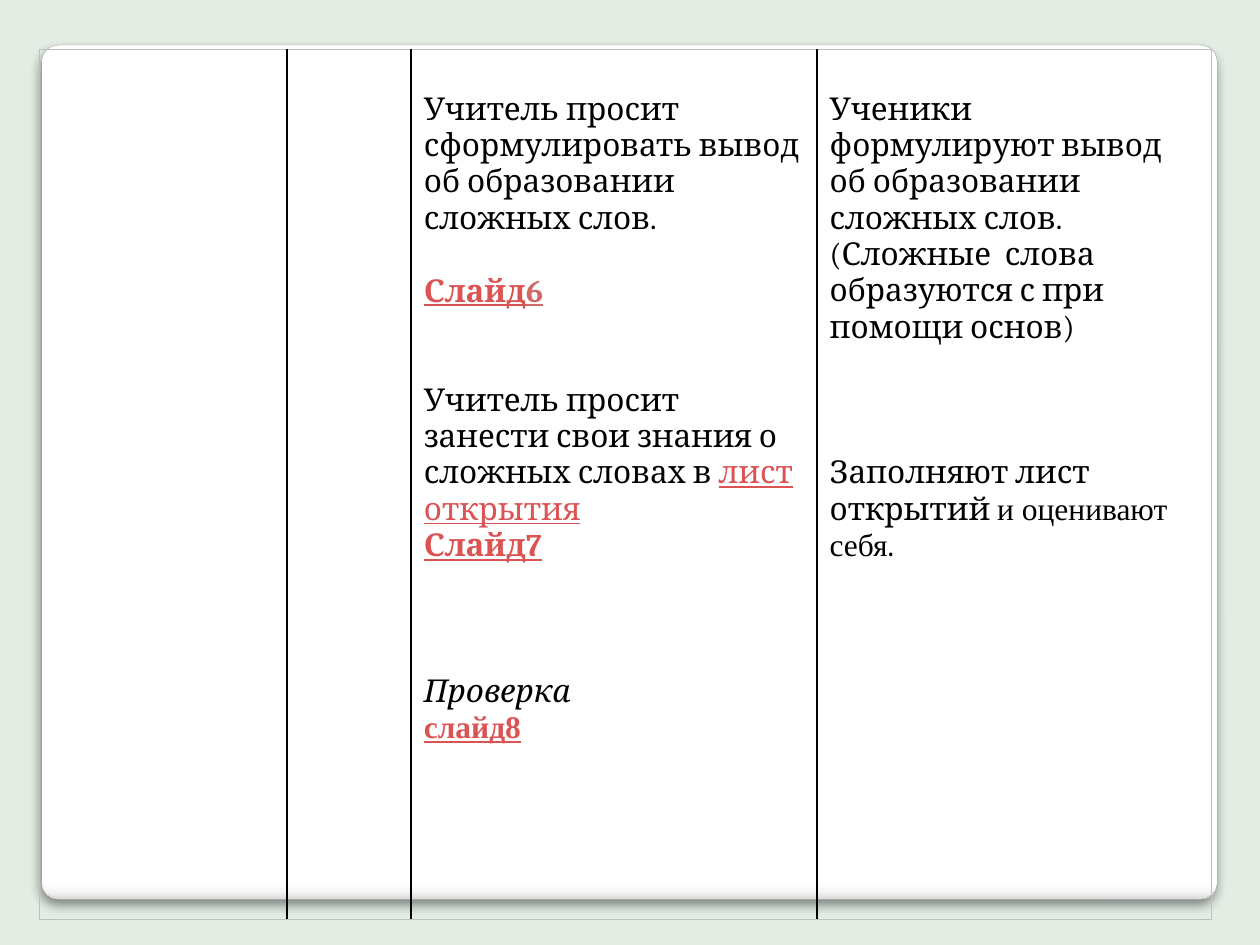
from lxml import etree
from pptx import Presentation
from pptx.dml.color import RGBColor as Rgb
from pptx.enum.shapes import MSO_SHAPE as Kind
from pptx.oxml import parse_xml as parse
from pptx.oxml.ns import qn
from pptx.util import Cm, Pt

NS = 'xmlns:a="http://schemas.openxmlformats.org/drawingml/2006/main"'
INK, LINK, ROSE, EDGE = "000000", "DB5353", "CF6868", "BFBFBF"
SERIF, ROMAN = "Cambria", "Times New Roman"
COLS = [5, 2.5, 8.18, 7.95]
ROWS = [16.51, 1.02]
STOPS = [(0, "FFFFFF"), (98, "FFFFFF"), (99, "F7F7F7"), (100, "DADADA")]
STEP = 20.8

# fmt: off
TEXT = {
    2: [
        (0, SERIF, "", [("Учитель просит сформулировать вывод об образовании сложных слов.", INK)]),
        (1, SERIF, "bu", [("Слайд", LINK), ("6", ROSE)]),
        (2, SERIF, "", [("Учитель просит занести свои знания о сложных словах в ", INK),
                        ("лист открытия", LINK)]),
        (0, SERIF, "bu", [("Слайд7", LINK)]),
        (3, SERIF, "i", [("Проверка", INK)]),
        (0, ROMAN, "bu", [("слайд8", LINK)]),
    ],
    3: [
        (0, SERIF, "", [("Ученики формулируют вывод об образовании сложных слов. "
                         "(Сложные  слова образуются с при помощи основ)", INK)]),
        (3, SERIF, "", [("Заполняют лист открытий ", INK),
                        ("и оценивают себя", INK, ROMAN), (".", INK)]),
    ],
}
# fmt: on


def rgb(code):
    """Turn a hex string into a colour."""
    return Rgb.from_string(code)


def add_card(slide):
    """Draw the rounded white card with its soft shadow."""
    card = slide.shapes.add_shape(Kind.ROUNDED_RECTANGLE, Cm(0.84), Cm(0.91), Cm(23.7), Cm(17.22))
    card.adjustments[0] = 0.02
    card.line.color.rgb = rgb("A4A4A4")
    card.line.width = Pt(0.16)
    stops = "".join(
        f'<a:gs pos="{pos * 1000}"><a:srgbClr val="{code}"/></a:gs>' for pos, code in STOPS
    )
    props = card.element.spPr
    props.find(qn("a:ln")).addprevious(
        parse(f'<a:gradFill {NS}><a:gsLst>{stops}</a:gsLst><a:lin ang="5400000"/></a:gradFill>')
    )
    props.append(
        parse(
            f'<a:effectLst {NS}><a:outerShdw blurRad="{Pt(6)}" dist="{Pt(4)}" dir="5400000">'
            '<a:srgbClr val="000000"><a:alpha val="45000"/></a:srgbClr></a:outerShdw></a:effectLst>'
        )
    )


def set_edge(cell, side, style):
    """Set one border of a cell, or clear it when style is None."""
    line = etree.SubElement(cell._tc.get_or_add_tcPr(), qn(f"a:ln{side}"))
    if style is None:
        etree.SubElement(line, qn("a:noFill"))
        return
    code, width = style
    line.set("w", str(Pt(width)))
    fill = etree.SubElement(line, qn("a:solidFill"))
    etree.SubElement(fill, qn("a:srgbClr"), val=code)


def fill_cell(cell, paras):
    """Write the paragraphs of one cell."""
    cell.margin_top = Cm(0.86)
    frame = cell.text_frame
    for num, (gap, face, marks, runs) in enumerate(paras):
        para = frame.add_paragraph() if num else frame.paragraphs[0]
        para.space_before = Pt(gap * STEP)
        font = para.font
        font.size, font.name = Pt(18), face
        font.bold, font.italic = "b" in marks, "i" in marks
        for text, code, *other in runs:
            run = para.add_run()
            run.text = text
            run.font.size = Pt(18)
            run.font.name = other[0] if other else face
            run.font.bold, run.font.italic = font.bold, font.italic
            run.font.underline = code != INK
            run.font.color.rgb = rgb(code)


def add_grid(slide):
    """Build the lesson table."""
    frame = slide.shapes.add_table(
        len(ROWS), len(COLS), Cm(0.79), Cm(0.99), Cm(sum(COLS)), Cm(sum(ROWS))
    )
    table = frame.table
    table.first_row = table.horz_banding = False
    for col, width in zip(table.columns, COLS):
        col.width = Cm(width)
    for row, height in zip(table.rows, ROWS):
        row.height = Cm(height)
    outer, inner = (EDGE, 0.5), (INK, 1)
    for y in range(len(ROWS)):
        for x in range(len(COLS)):
            cell = table.cell(y, x)
            set_edge(cell, "L", inner if x else outer)
            set_edge(cell, "R", inner if x < len(COLS) - 1 else outer)
            set_edge(cell, "T", None if y else outer)
            set_edge(cell, "B", None if y < len(ROWS) - 1 else outer)
            cell.fill.background()
            if y == 0 and x in TEXT:
                fill_cell(cell, TEXT[x])


def main():
    """Build and save the slide."""
    deck = Presentation()
    deck.slide_width, deck.slide_height = Cm(25.4), Cm(19.05)
    slide = deck.slides.add_slide(deck.slide_layouts[6])
    back = slide.background.fill
    back.solid()
    back.fore_color.rgb = rgb("E3EDE4")
    add_card(slide)
    add_grid(slide)
    deck.save("out.pptx")


if __name__ == "__main__":
    main()
